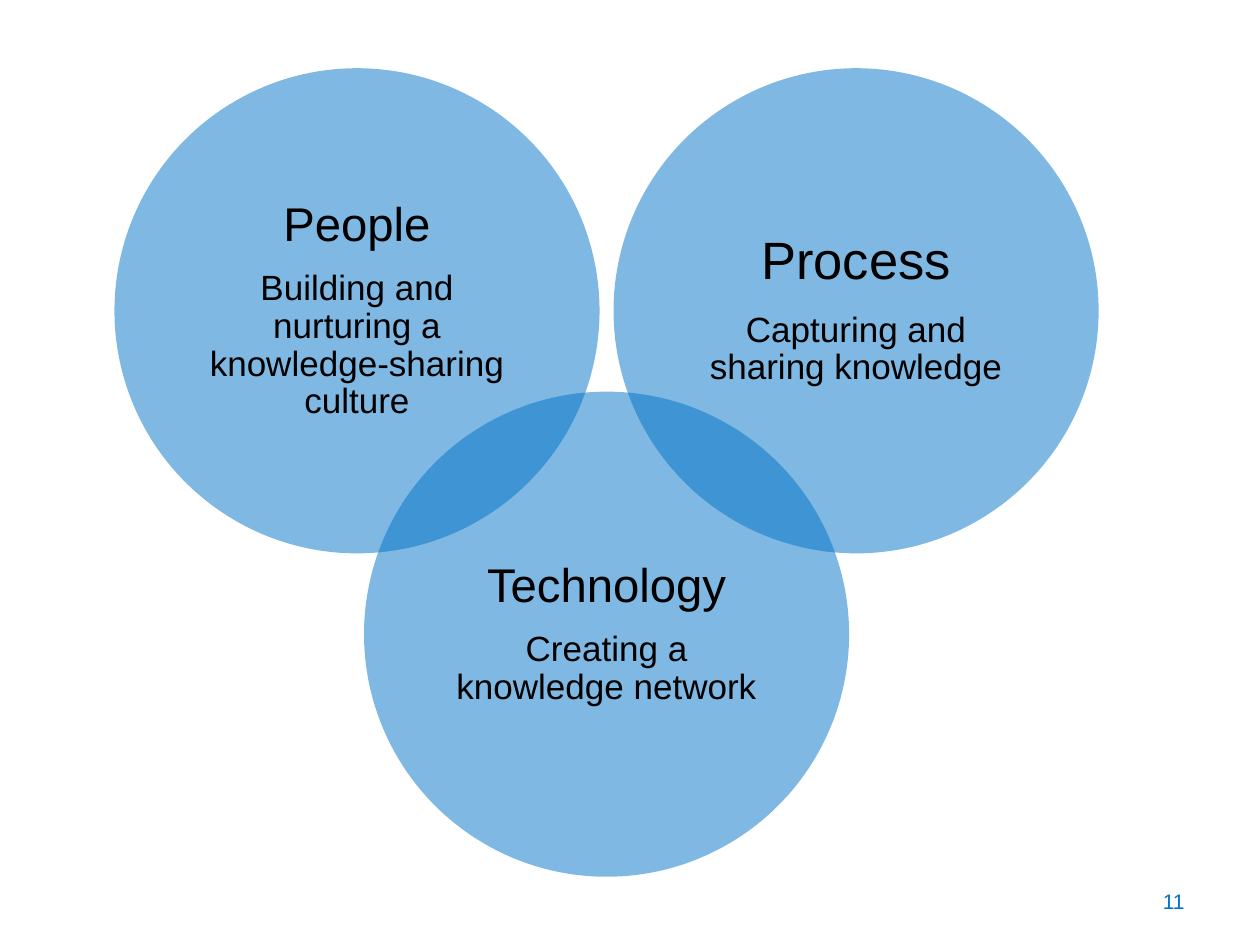
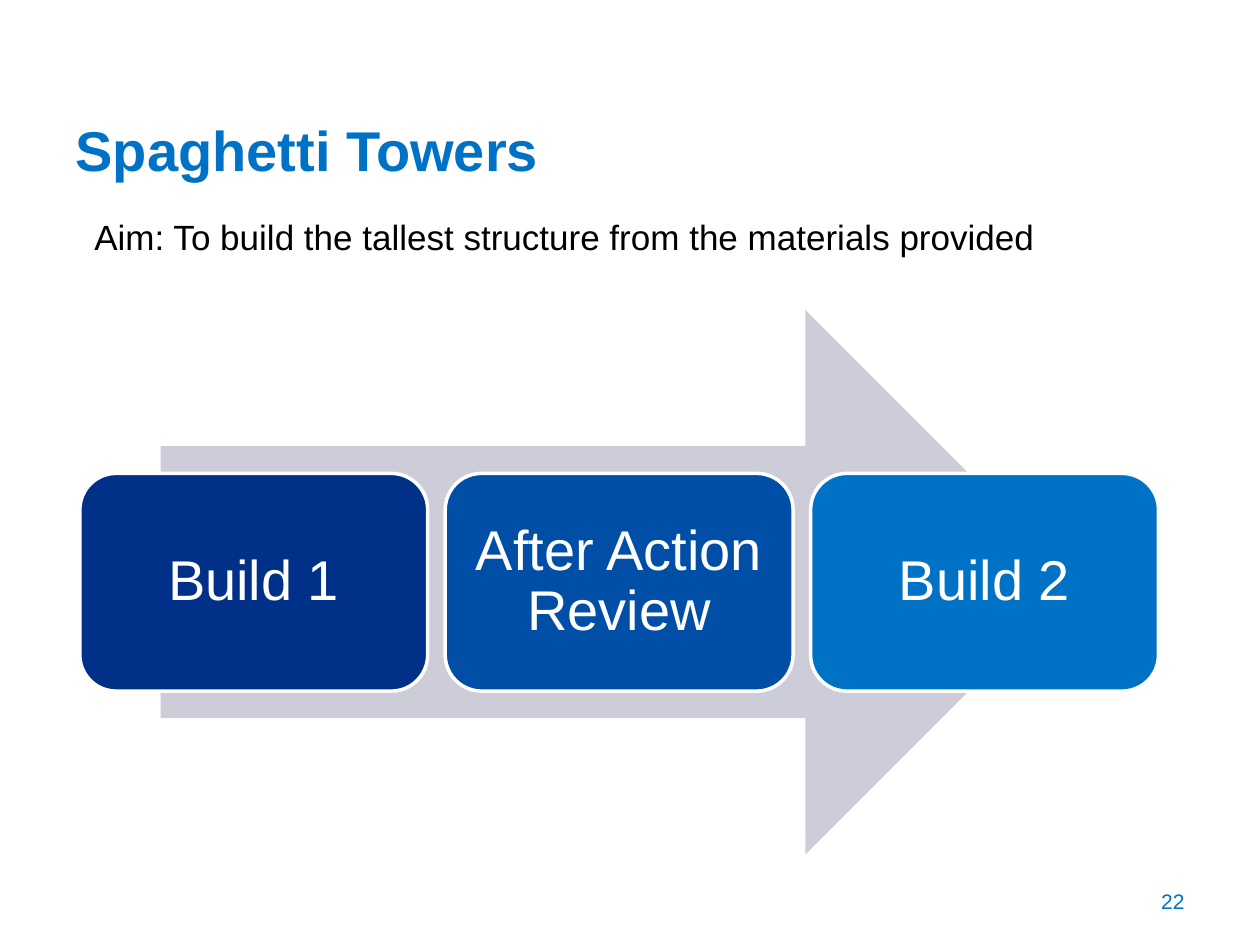
from dataclasses import dataclass

from lxml.etree import SubElement
from pptx import Presentation
from pptx.dml.color import RGBColor as RGB
from pptx.enum.shapes import MSO_SHAPE as SHAPE
from pptx.enum.text import MSO_ANCHOR as ANCHOR, MSO_AUTO_SIZE as AUTO, PP_ALIGN as ALIGN
from pptx.oxml.ns import qn
from pptx.util import Pt


@dataclass(frozen=True)
class Theme:
    """Colours, type sizes and font shared by the slides."""
    font: str = "Arial"
    blue: RGB = RGB(0x00, 0x72, 0xC6)
    mid: RGB = RGB(0x00, 0x4E, 0xA6)
    navy: RGB = RGB(0x00, 0x30, 0x87)
    grey: RGB = RGB(0xCC, 0xCD, 0xD9)
    black: RGB = RGB(0, 0, 0)
    white: RGB = RGB(0xFF, 0xFF, 0xFF)
    title: int = 32
    body: int = 20
    number: int = 12


T = Theme()


def pts(*lengths):
    """Convert lengths in points to slide units."""
    return [Pt(v) for v in lengths]


def style(p, size, color, align=ALIGN.LEFT, bold=False):
    """Format a paragraph and its runs."""
    p.alignment = align
    for r in p.runs:
        f = r.font
        f.name, f.size, f.bold = T.font, Pt(size), bold
        f.color.rgb = color


def add_shape(slide, kind, box, fill, line=None):
    """Add a flat preset shape with an optional outline colour."""
    sp = slide.shapes.add_shape(kind, *pts(*box))
    sp.shadow.inherit = False
    sp.fill.solid()
    sp.fill.fore_color.rgb = fill
    if line is None:
        sp.line.fill.background()
    else:
        sp.line.color.rgb = line
        sp.line.width = Pt(2)
    return sp


def fill_text(sp, lines, color, inset):
    """Centre (text, size) lines in a shape, spaced by their size."""
    tf = sp.text_frame
    tf.word_wrap = True
    tf.vertical_anchor = ANCHOR.MIDDLE
    tf.margin_left = tf.margin_top = tf.margin_right = tf.margin_bottom = Pt(inset)
    tf.text = "\n".join(text for text, _ in lines)
    for p, (_, size) in zip(tf.paragraphs, lines):
        style(p, size, color, ALIGN.CENTER)
        p.line_spacing = 0.9
    for p, (_, size) in zip(tf.paragraphs[:-1], lines):
        p.space_after = Pt(0.4 * size)


def add_label(slide, box, text, size, color, align=ALIGN.LEFT, anchor=ANCHOR.TOP, wrap=True):
    """Add a one-paragraph text box."""
    tf = slide.shapes.add_textbox(*pts(*box)).text_frame
    tf.word_wrap = wrap
    tf.vertical_anchor = anchor
    tf.text = text
    style(tf.paragraphs[0], size, color, align)


def add_number(slide, number):
    """Add the slide number at the lower right."""
    add_label(slide, (516.2, 500.4, 167.8, 28.8), str(number), T.number, T.blue,
              ALIGN.RIGHT, ANCHOR.MIDDLE)


def add_title(slide, box, text):
    """Move and format the title placeholder."""
    sp = slide.shapes.title
    sp.left, sp.top, sp.width, sp.height = pts(*box)
    tf = sp.text_frame
    tf.text = text
    tf.auto_size = AUTO.NONE
    tf.vertical_anchor = ANCHOR.MIDDLE
    style(tf.paragraphs[0], T.title, T.blue, bold=True)


def add_circles(slide, box, circles):
    """Overlap translucent circles, the odd ones dropped to the box's bottom."""
    x, y, w, h = box
    d = 0.6 * h
    step = (w - d) / 2
    for col, heading, size, detail in circles:
        place = (x + col * step, y + col % 2 * (h - d), d, d)
        sp = add_shape(slide, SHAPE.OVAL, place, T.blue)
        color = next(sp.element.spPr.iter(qn("a:srgbClr")))
        SubElement(color, qn("a:alpha"), val="50000")
        fill_text(sp, [(heading, size), (detail, T.body)], T.black, 8)


def add_process(slide, box, steps):
    """Lay equal step cards over a wide arrow."""
    x, y, w, h = box
    add_shape(slide, SHAPE.RIGHT_ARROW, (x + 0.075 * w, y, 0.85 * w, h), T.grey)
    gap = 10
    card_w = (w - gap * (len(steps) - 1)) / len(steps)
    for i, (text, fill) in enumerate(steps):
        card = (x + i * (card_w + gap), y + 0.3 * h, card_w, 0.4 * h)
        sp = add_shape(slide, SHAPE.ROUNDED_RECTANGLE, card, fill, T.white)
        fill_text(sp, [(text, T.title)], T.white, 9.4)


def build_circles_slide(prs):
    """Build the people, process and technology slide."""
    slide = prs.slides.add_slide(prs.slide_layouts[6])
    add_number(slide, 11)
    add_circles(slide, (65.4, 39, 562.4, 462), [
        (0, "People", 27, "Building and nurturing a knowledge-sharing culture"),
        (1, "Technology", 27, "Creating a knowledge network"),
        (2, "Process", 30, "Capturing and sharing knowledge"),
    ])


def build_towers_slide(prs):
    """Build the tower exercise slide."""
    slide = prs.slides.add_slide(prs.slide_layouts[5])
    add_process(slide, (45.6, 177.2, 616.4, 311), [
        ("Build 1", T.navy), ("After Action Review", T.mid), ("Build 2", T.blue),
    ])
    add_number(slide, 22)
    add_title(slide, (36, 59, 579.6, 52.6), "Spaghetti Towers")
    add_label(slide, (46.8, 119.5, 555.8, 31.7),
              "Aim: To build the tallest structure from the materials provided",
              T.body, T.black, wrap=False)


def main():
    """Build and save both slides."""
    prs = Presentation()
    prs.slide_width, prs.slide_height = pts(720, 540)
    build_circles_slide(prs)
    build_towers_slide(prs)
    prs.save("out.pptx")


if __name__ == "__main__":
    main()
